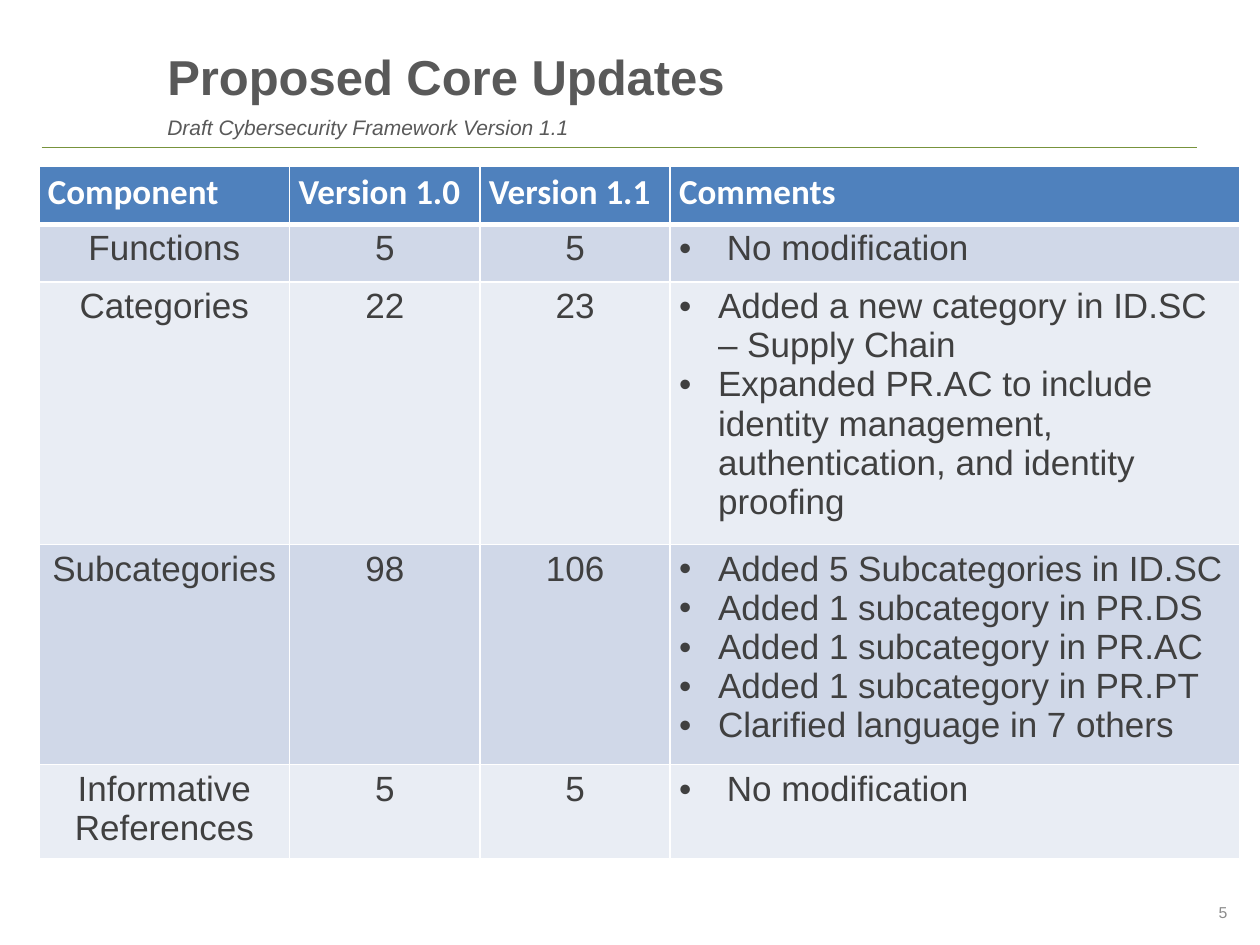
import pptx
import pptx.dml.color
import pptx.enum.shapes
import pptx.enum.text
import pptx.oxml
import pptx.oxml.ns
import pptx.util

COLORS = {
    "title": "595959",
    "rule": "77933C",
    "header": "4F81BD",
    "band_dark": "D0D8E8",
    "band_light": "E9EDF4",
    "body": "404040",
    "white": "FFFFFF",
    "page": "8C8C8C",
}
ALIGN = pptx.enum.text.PP_ALIGN
ANCHOR = pptx.enum.text.MSO_ANCHOR

TITLE = {"name": "Arial", "size": 28, "bold": True, "color": "title"}
SUBTITLE = {"name": "Arial", "size": 12, "bold": False, "italic": True, "color": "title"}
HEADER = {"name": "Calibri", "size": 20, "bold": True, "color": "white"}
BODY = {"name": "Arial", "size": 20, "bold": False, "color": "body"}
PAGE = {"name": "Arial", "size": 9, "color": "page"}

HEADINGS = ["Component", "Version 1.0", "Version 1.1", "Comments"]
UPDATES = [
    ("Functions", "5", "5", ["No modification"]),
    ("Categories", "22", "23", [
        "Added a new category in ID.SC – Supply Chain",
        "Expanded PR.AC to include identity management, "
        "authentication, and identity proofing",
    ]),
    ("Subcategories", "98", "106", [
        "Added 5 Subcategories in ID.SC",
        "Added 1 subcategory in PR.DS",
        "Added 1 subcategory in PR.AC",
        "Added 1 subcategory in PR.PT",
        "Clarified language in 7 others",
    ]),
    ("Informative References", "5", "5", ["No modification"]),
]


def rgb(color):
    return pptx.dml.color.RGBColor.from_string(COLORS[color])


def apply_format(font, style):
    for attribute, value in style.items():
        if attribute == "color":
            font.color.rgb = rgb(value)
        else:
            setattr(font, attribute, pptx.util.Pt(value) if attribute == "size" else value)


def add_bullet(paragraph, indent):
    properties = paragraph._p.get_or_add_pPr()
    properties.set("marL", str(indent))
    properties.set("indent", str(-indent))
    namespace = pptx.oxml.ns.nsdecls("a")
    for element in ('a:buFont {} typeface="Arial"', 'a:buChar {} char="•"'):
        properties.append(pptx.oxml.parse_xml(f"<{element.format(namespace)}/>"))


def add_borders(cell, bottom):
    """Draw white cell borders, 1 pt thick except for the given bottom one."""
    for side, points in {"L": 1, "R": 1, "T": 1, "B": bottom}.items():
        cell._tc.get_or_add_tcPr().append(pptx.oxml.parse_xml(
            f'<a:ln{side} {pptx.oxml.ns.nsdecls("a")} w="{pptx.util.Pt(points)}">'
            f'<a:solidFill><a:srgbClr val="{COLORS["white"]}"/></a:solidFill></a:ln{side}>'))


class SlideBuilder:
    """Places elements on a grid of 100 columns by 75 rows."""

    COLUMNS, ROWS = 100, 75

    def __init__(self, presentation):
        self.cell_width = presentation.slide_width / self.COLUMNS
        self.cell_height = presentation.slide_height / self.ROWS
        self.slide = presentation.slides.add_slide(presentation.slide_layouts[6])

    def across(self, columns):
        return round(columns * self.cell_width)

    def down(self, rows):
        return round(rows * self.cell_height)

    def area(self, left, top, width, height):
        return self.across(left), self.down(top), self.across(width), self.down(height)

    def text(self, area, lines, anchor, align=ALIGN.LEFT, spacing=None):
        """Write (text, style) lines as one paragraph with line breaks."""
        frame = self.slide.shapes.add_textbox(*self.area(*area)).text_frame
        frame.word_wrap = True
        frame.vertical_anchor = anchor
        paragraph = frame.paragraphs[0]
        paragraph.alignment = align
        if spacing:
            paragraph.line_spacing = pptx.util.Pt(spacing)
        for number, (words, style) in enumerate(lines):
            if number:
                paragraph.add_line_break()
            run = paragraph.add_run()
            run.text = words
            apply_format(run.font, style)

    def rule(self, left, right, row):
        line = self.slide.shapes.add_connector(
            pptx.enum.shapes.MSO_CONNECTOR.STRAIGHT,
            self.across(left), self.down(row), self.across(right), self.down(row))
        line.line.color.rgb = rgb("rule")
        line.line.width = pptx.util.Pt(0.75)
        line._element.spPr.append(pptx.oxml.parse_xml(
            f'<a:effectLst {pptx.oxml.ns.nsdecls("a")}/>'))

    def cell(self, cell, lines, style, fill, align=ALIGN.LEFT, indent=0, bottom=1):
        margins = {"left": self.across(0.7), "right": self.across(0.7),
                   "top": self.down(0.4), "bottom": self.down(0.4)}
        for side, margin in margins.items():
            setattr(cell, f"margin_{side}", margin)
        add_borders(cell, bottom)
        cell.fill.solid()
        cell.fill.fore_color.rgb = rgb(fill)
        cell.text_frame.text = "\n".join(lines)
        for paragraph in cell.text_frame.paragraphs:
            paragraph.alignment = align
            if indent:
                add_bullet(paragraph, self.across(indent))
            apply_format(paragraph.runs[0].font, style)

    def table(self, left, top, widths, heights):
        area = self.area(left, top, sum(widths), sum(heights))
        table = self.slide.shapes.add_table(len(heights), len(widths), *area).table
        for column, width in zip(table.columns, widths):
            column.width = self.across(width)
        for row, height in zip(table.rows, heights):
            row.height = self.down(height)

        for column, heading in enumerate(HEADINGS):
            self.cell(table.cell(0, column), [heading], HEADER, "header", bottom=3)
        for row, (*values, comments) in enumerate(UPDATES, start=1):
            band = "band_dark" if row % 2 else "band_light"
            for column, value in enumerate(values):
                self.cell(table.cell(row, column), [value], BODY, band, ALIGN.CENTER)
            indent = 3.8 if len(comments) == 1 else 3.1
            self.cell(table.cell(row, len(values)), comments, BODY, band, indent=indent)


def main():
    presentation = pptx.Presentation()
    presentation.slide_width = pptx.util.Inches(10)
    presentation.slide_height = pptx.util.Inches(7.5)

    builder = SlideBuilder(presentation)
    builder.rule(3.3, 95, 11.7)
    builder.text((12.3, 3.3, 87.7, 8.3), [
        ("Proposed Core Updates", TITLE),
        ("Draft Cybersecurity Framework Version 1.1", SUBTITLE),
    ], ANCHOR.BOTTOM, spacing=19.5)
    builder.table(3.1, 13.2, widths=[19.9, 15.1, 15.1, 45.2],
                  heights=[4.6, 4.6, 19.4, 16.2, 6.9])
    builder.text((80.9, 70.9, 17.5, 3), [("5", PAGE)], ANCHOR.MIDDLE, ALIGN.RIGHT)

    presentation.save("out.pptx")


if __name__ == "__main__":
    main()
